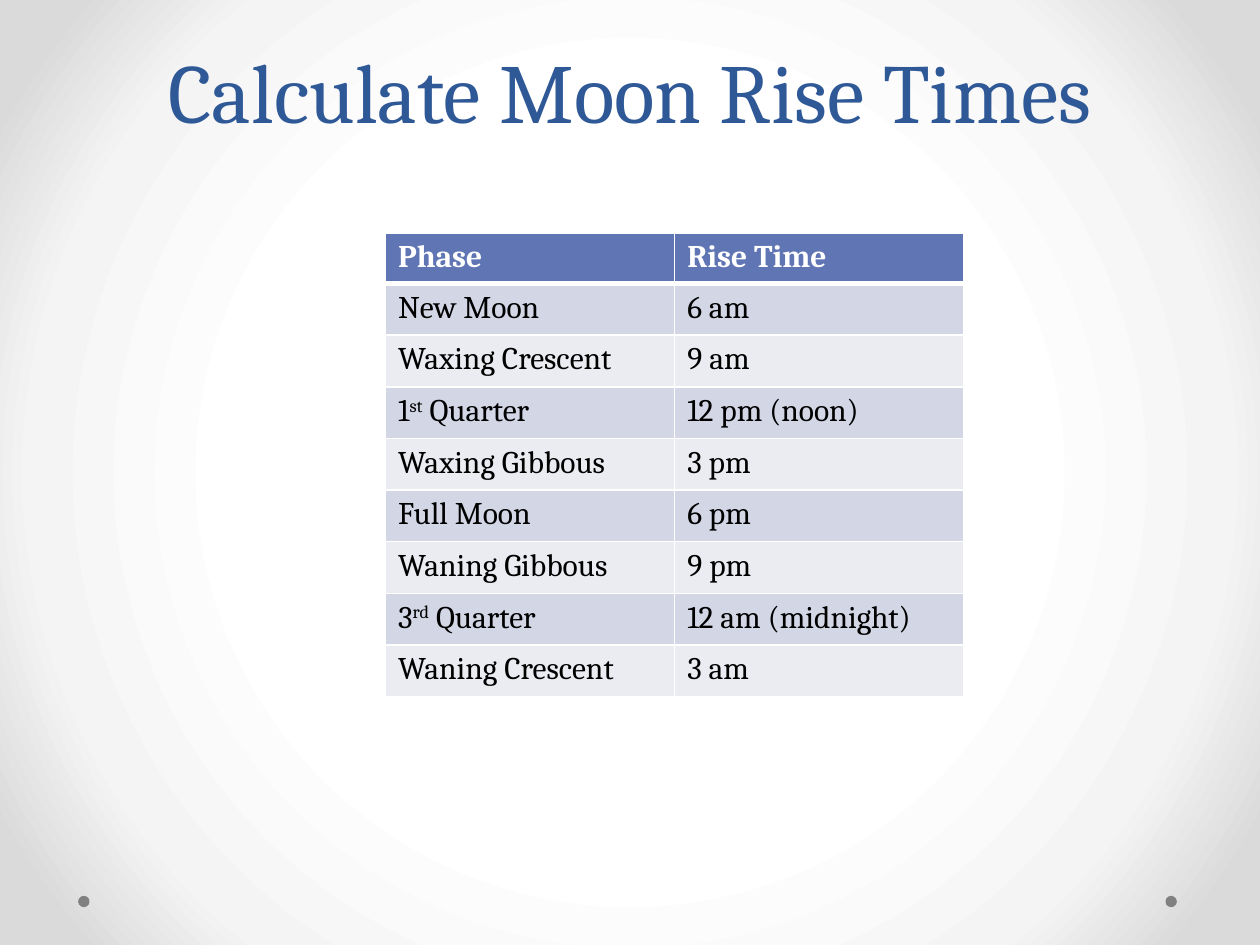
from lxml.etree import SubElement
from pptx import Presentation
from pptx.dml.color import RGBColor
from pptx.enum.shapes import MSO_SHAPE as Shape
from pptx.enum.text import MSO_ANCHOR as Anchor, PP_ALIGN as Align
from pptx.oxml import parse_xml
from pptx.oxml.ns import nsdecls, qn
from pptx.util import Inches, Pt

FONT = "Cambria"
HEADER = ("Phase", "Rise Time")
RISE_TIMES = [
    ("New Moon", "6 am"),
    ("Waxing Crescent", "9 am"),
    ("1^st^ Quarter", "12 pm (noon)"),
    ("Waxing Gibbous", "3 pm"),
    ("Full Moon", "6 pm"),
    ("Waning Gibbous", "9 pm"),
    ("3^rd^ Quarter", "12 am (midnight)"),
    ("Waning Crescent", "3 am"),
]


def color(value):
    """Turn a hex string into a color."""
    return RGBColor.from_string(value)


def set_background(slide, stops):
    """Fill the slide with a circular gradient from its centre."""
    stop_xml = "".join(
        f'<a:gs pos="{position * 1000}"><a:srgbClr val="{value}"/></a:gs>'
        for position, value in stops
    )
    background = parse_xml(
        f'<p:bg {nsdecls("p", "a")}><p:bgPr><a:gradFill rotWithShape="1">'
        f'<a:gsLst>{stop_xml}</a:gsLst><a:path path="circle">'
        '<a:fillToRect l="50000" t="50000" r="50000" b="50000"/></a:path>'
        '</a:gradFill><a:effectLst/></p:bgPr></p:bg>'
    )
    slide.element.cSld.insert(0, background)


def write(paragraph, text, size=18, fill="000000", bold=False):
    """Write text in a paragraph, raising what stands between carets."""
    for index, part in enumerate(text.split("^")):
        run = paragraph.add_run()
        run.text = part
        run.font.name = FONT
        run.font.size = Pt(size)
        run.font.bold = bold
        run.font.color.rgb = color(fill)
        if index % 2:
            run.font._element.set("baseline", "30000")


def add_dot(slide, left, top, size=0.09):
    """Add a small grey dot."""
    dot = slide.shapes.add_shape(
        Shape.OVAL, Inches(left), Inches(top), Inches(size), Inches(size)
    )
    dot.shadow.inherit = False
    dot.fill.solid()
    dot.fill.fore_color.rgb = color("808080")
    dot.line.fill.background()


def add_title(slide, text):
    """Add the centred slide title."""
    box = slide.shapes.add_textbox(Inches(0.5), 0, Inches(9), Inches(1.16))
    frame = box.text_frame
    frame.word_wrap = True
    frame.vertical_anchor = Anchor.BOTTOM
    paragraph = frame.paragraphs[0]
    paragraph.alignment = Align.CENTER
    paragraph.line_spacing = Pt(58)
    write(paragraph, text, size=48, fill="2F5897")


def set_borders(cell, top, bottom):
    """Give a cell white borders with the given top and bottom widths."""
    properties = cell._tc.get_or_add_tcPr()
    for side, width in (("L", 1), ("R", 1), ("T", top), ("B", bottom)):
        line = SubElement(properties, qn(f"a:ln{side}"), w=str(Pt(width)))
        fill = SubElement(line, qn("a:solidFill"))
        SubElement(fill, qn("a:srgbClr"), val="FFFFFF")


def add_rise_table(slide):
    """Add the banded table of moon phases and rise times."""
    rows = [HEADER, *RISE_TIMES]
    heights = [0.37] + [0.41] * len(RISE_TIMES)
    table = slide.shapes.add_table(
        len(rows), len(HEADER),
        Inches(3.06), Inches(1.85), Inches(4.59), Inches(sum(heights)),
    ).table
    for row_index, (texts, height) in enumerate(zip(rows, heights)):
        table.rows[row_index].height = Inches(height)
        is_header = row_index == 0
        band = "D2D6E5" if row_index % 2 else "EAECF2"
        for column_index, text in enumerate(texts):
            cell = table.cell(row_index, column_index)
            set_borders(cell, 3 if row_index == 1 else 1, 3 if is_header else 1)
            cell.fill.solid()
            cell.fill.fore_color.rgb = color("6076B4" if is_header else band)
            write(
                cell.text_frame.paragraphs[0], text,
                fill="FFFFFF" if is_header else "000000", bold=is_header,
            )


def main():
    """Build and save the slide."""
    presentation = Presentation()
    presentation.slide_width = Inches(10)
    presentation.slide_height = Inches(7.5)
    slide = presentation.slides.add_slide(presentation.slide_layouts[6])
    set_background(slide, [(50, "FFFFFF"), (76, "F4F4F4"), (92, "DADADA")])
    for left in (9.25, 0.62):
        add_dot(slide, left, 7.11)
    add_title(slide, "Calculate Moon Rise Times")
    add_rise_table(slide)
    presentation.save("out.pptx")


if __name__ == "__main__":
    main()
